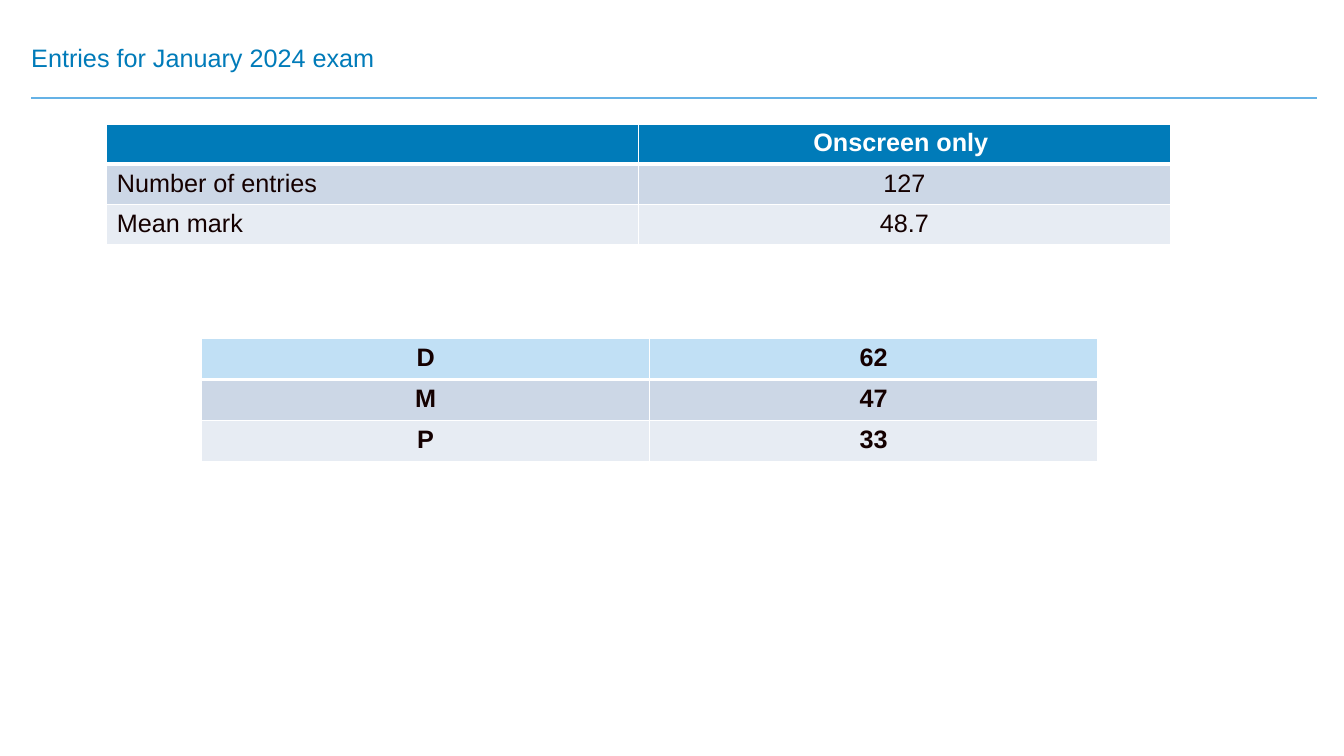
from dataclasses import dataclass

from lxml import etree
from pptx import Presentation
from pptx.dml.color import RGBColor
from pptx.enum.shapes import MSO_CONNECTOR
from pptx.enum.text import MSO_ANCHOR, PP_ALIGN
from pptx.oxml.ns import qn
from pptx.util import Pt

STRAIGHT = MSO_CONNECTOR.STRAIGHT
BOTTOM = MSO_ANCHOR.BOTTOM
LEFT, CENTER = PP_ALIGN.LEFT, PP_ALIGN.CENTER


@dataclass(frozen=True)
class Theme:
    font: str = "Arial"
    size: int = 18
    blue: str = "007BB9"
    rule: str = "65B2E6"
    pale_blue: str = "C1E0F5"
    band_dark: str = "CCD7E6"
    band_light: str = "E7ECF3"
    ink: str = "140000"
    white: str = "FFFFFF"


theme = Theme()


def add_text(paragraph, text, color, bold=False):
    run = paragraph.add_run()
    run.text = text
    run.font.name = theme.font
    run.font.size = Pt(theme.size)
    run.font.bold = bold
    run.font.color.rgb = RGBColor.from_string(color)


def set_borders(cell, bottom_width):
    properties = cell._tc.get_or_add_tcPr()
    widths = {"a:lnL": 1, "a:lnR": 1, "a:lnT": 1, "a:lnB": bottom_width}
    for position, (tag, width) in enumerate(widths.items()):
        line = etree.Element(qn(tag), w=str(Pt(width)))
        fill = etree.SubElement(line, qn("a:solidFill"))
        etree.SubElement(fill, qn("a:srgbClr"), val=theme.white)
        properties.insert(position, line)


presentation = Presentation()
presentation.slide_width = Pt(960)
presentation.slide_height = Pt(540)
slide = presentation.slides.add_slide(presentation.slide_layouts[6])

title_rule = slide.shapes.add_connector(STRAIGHT, Pt(22.32), Pt(69.84), Pt(941.04), Pt(69.84))
title_rule.line.color.rgb = RGBColor.from_string(theme.rule)
title_rule.line.width = Pt(1.75)
etree.SubElement(title_rule._element.spPr, qn("a:effectLst"))

title = slide.shapes.add_textbox(Pt(22.32), Pt(16.56), Pt(804.96), Pt(35.28))
title_frame = title.text_frame
title_frame.word_wrap = True
title_frame.vertical_anchor = BOTTOM
title_frame.margin_left = title_frame.margin_right = 0
title_frame.margin_top = title_frame.margin_bottom = 0
title_paragraph = title_frame.paragraphs[0]
title_paragraph.line_spacing = 0.9
add_text(title_paragraph, "Entries for January 2024 exam", theme.blue)

tables = [
    {
        "place": (76.32, 88.56, 759.6, 71.28),
        "rows": [("", "Onscreen only "), ("Number of entries", "127"), ("Mean mark", "48.7")],
        "header": (theme.blue, theme.white),
        "label_align": LEFT,
        "bold_body": False,
    },
    {
        "place": (144, 241.92, 640.08, 87.84),
        "rows": [("D", "62"), ("M", "47"), ("P", "33")],
        "header": (theme.pale_blue, theme.ink),
        "label_align": CENTER,
        "bold_body": True,
    },
]

for data in tables:
    rows = data["rows"]
    place = [Pt(length) for length in data["place"]]
    table = slide.shapes.add_table(len(rows), 2, *place).table
    styles = [data["header"], (theme.band_dark, theme.ink), (theme.band_light, theme.ink)]
    for row_index, (row, (fill, color)) in enumerate(zip(rows, styles)):
        is_header = row_index == 0
        for column_index, text in enumerate(row):
            cell = table.cell(row_index, column_index)
            cell.fill.solid()
            cell.fill.fore_color.rgb = RGBColor.from_string(fill)
            set_borders(cell, 3 if is_header else 1)
            paragraph = cell.text_frame.paragraphs[0]
            paragraph.alignment = CENTER if column_index else data["label_align"]
            if text:
                add_text(paragraph, text, color, is_header or data["bold_body"])

presentation.save("out.pptx")
